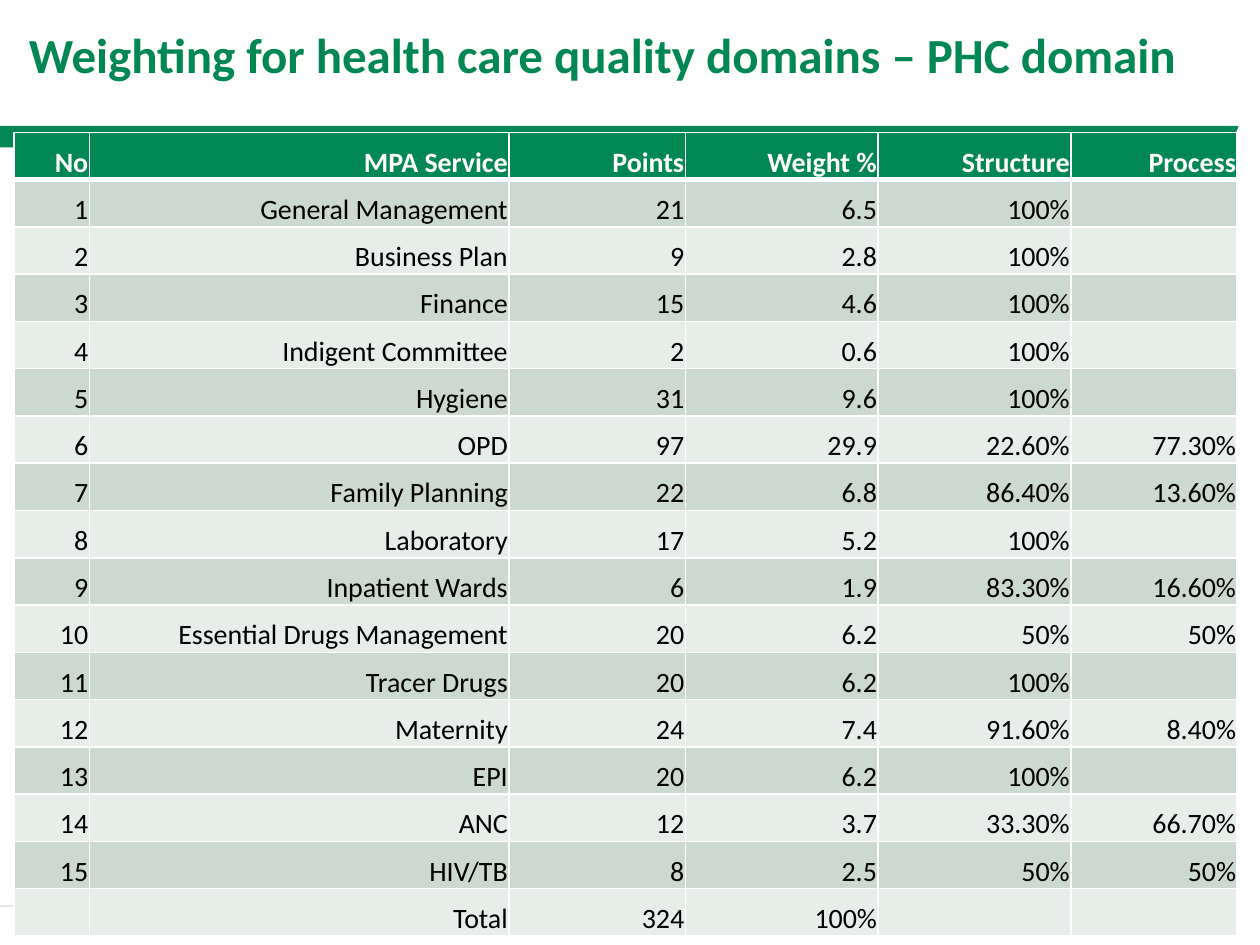
"""Build the slide on weighting for the primary health care quality domain."""
from dataclasses import dataclass

from lxml.etree import SubElement
from pptx import Presentation
from pptx.dml.color import RGBColor
from pptx.enum.shapes import MSO_CONNECTOR, MSO_SHAPE
from pptx.enum.text import MSO_ANCHOR, MSO_AUTO_SIZE, PP_ALIGN
from pptx.oxml.ns import qn
from pptx.util import Inches, Pt

COLORS = {"green": "008753", "white": "FFFFFF", "black": "000000",
          "rule": "E5E5E5", "odd": "CCD9D1", "even": "E7EDE9"}
HEADER = ["No", "MPA Service", "Points", "Weight %", "Structure", "Process"]
SERVICES = [
    ["General Management", "21", "6.5", "100%", ""],
    ["Business Plan", "9", "2.8", "100%", ""],
    ["Finance", "15", "4.6", "100%", ""],
    ["Indigent Committee", "2", "0.6", "100%", ""],
    ["Hygiene", "31", "9.6", "100%", ""],
    ["OPD", "97", "29.9", "22.60%", "77.30%"],
    ["Family Planning", "22", "6.8", "86.40%", "13.60%"],
    ["Laboratory", "17", "5.2", "100%", ""],
    ["Inpatient Wards", "6", "1.9", "83.30%", "16.60%"],
    ["Essential Drugs Management", "20", "6.2", "50%", "50%"],
    ["Tracer Drugs", "20", "6.2", "100%", ""],
    ["Maternity", "24", "7.4", "91.60%", "8.40%"],
    ["EPI", "20", "6.2", "100%", ""],
    ["ANC", "12", "3.7", "33.30%", "66.70%"],
    ["HIV/TB", "8", "2.5", "50%", "50%"],
]
TOTAL = ["", "Total", "324", "100%", "", ""]
COLUMN_SHARES = [6, 33.3, 14, 15.3, 15.3, 13.2]


def color(name):
    return RGBColor.from_string(COLORS[name])


@dataclass
class Painter:
    deck: object
    page: object
    font: str = "Calibri"

    def across(self, percent):
        return round(self.deck.slide_width * percent / 100)

    def down(self, percent):
        return round(self.deck.slide_height * percent / 100)

    def frame(self, left, top, width, height):
        return self.across(left), self.down(top), self.across(width), self.down(height)

    def add_text(self, para, text, size, tone, bold=False):
        span = para.add_run()
        span.text = text
        span.font.name, span.font.size, span.font.bold = self.font, Pt(size), bold
        span.font.color.rgb = color(tone)

    def title(self, text, *place):
        box = self.page.shapes.title
        box.left, box.top, box.width, box.height = self.frame(*place)
        box.text_frame.auto_size = MSO_AUTO_SIZE.NONE
        box.text_frame.vertical_anchor = MSO_ANCHOR.MIDDLE
        para = box.text_frame.paragraphs[0]
        para.alignment = PP_ALIGN.LEFT
        para._p.get_or_add_pPr().set("marL", str(Inches(0.13)))
        self.add_text(para, text, 28, "green", True)

    def shape(self, kind, tone, *place):
        shape = self.page.shapes.add_shape(kind, *self.frame(*place))
        shape.shadow.inherit = False
        shape.fill.solid()
        shape.fill.fore_color.rgb = color(tone)
        shape.line.fill.background()

    def rule(self, left, right, height):
        line = self.page.shapes.add_connector(
            MSO_CONNECTOR.STRAIGHT, self.across(left), self.down(height),
            self.across(right), self.down(height))
        line.line.color.rgb = color("rule")
        line.line.width = Pt(1)
        SubElement(line._element.spPr, qn("a:effectLst"))

    def border(self, cell, bottom, top):
        properties = cell._tc.get_or_add_tcPr()
        for index, (side, width) in enumerate(
                [("lnL", 1), ("lnR", 1), ("lnT", top), ("lnB", bottom)]):
            line = properties.makeelement(qn(f"a:{side}"), {"w": str(Pt(width))})
            fill = SubElement(line, qn("a:solidFill"))
            SubElement(fill, qn("a:srgbClr"), val=COLORS["white"])
            properties.insert(index, line)

    def cell(self, cell, text, row):
        header = row == 0
        cell.margin_left = cell.margin_right = cell.margin_top = Inches(0.01)
        cell.margin_bottom = 0
        cell.vertical_anchor = MSO_ANCHOR.BOTTOM
        cell.fill.solid()
        cell.fill.fore_color.rgb = color("green" if header else "odd" if row % 2 else "even")
        self.border(cell, bottom=3 if header else 1, top=3 if row == 1 else 1)
        para = cell.text_frame.paragraphs[0]
        para.alignment = PP_ALIGN.RIGHT
        if text:
            self.add_text(para, text, 16, "white" if header else "black", header)

    def table(self, rows, shares, left, top, height):
        table = self.page.shapes.add_table(
            len(rows), len(shares), *self.frame(left, top, sum(shares), height)).table
        for column, share in zip(table.columns, shares):
            column.width = self.across(share)
        for index, values in enumerate(rows):
            table.rows[index].height = self.down(height / len(rows))
            for cell, text in zip(table.rows[index].cells, values):
                self.cell(cell, text, index)


def main():
    deck = Presentation()
    deck.slide_width, deck.slide_height = Inches(10), Inches(7.5)
    painter = Painter(deck, deck.slides.add_slide(deck.slide_layouts[5]))
    painter.title("Weighting for health care quality domains – PHC domain",
                  0, -0.27, 100, 11.87)
    painter.shape(MSO_SHAPE.RECTANGLE, "green", 0, 13.33, 98.3, 2.27)
    painter.shape(MSO_SHAPE.ISOSCELES_TRIANGLE, "white", 97.3, 13.33, 2.1, 2.8)
    painter.rule(0, 90, 95.87)
    numbered = [[str(number), *service] for number, service in enumerate(SERVICES, 1)]
    painter.table([HEADER, *numbered, TOTAL], COLUMN_SHARES, 1.1, 14, 85.07)
    deck.save("out.pptx")


if __name__ == "__main__":
    main()
